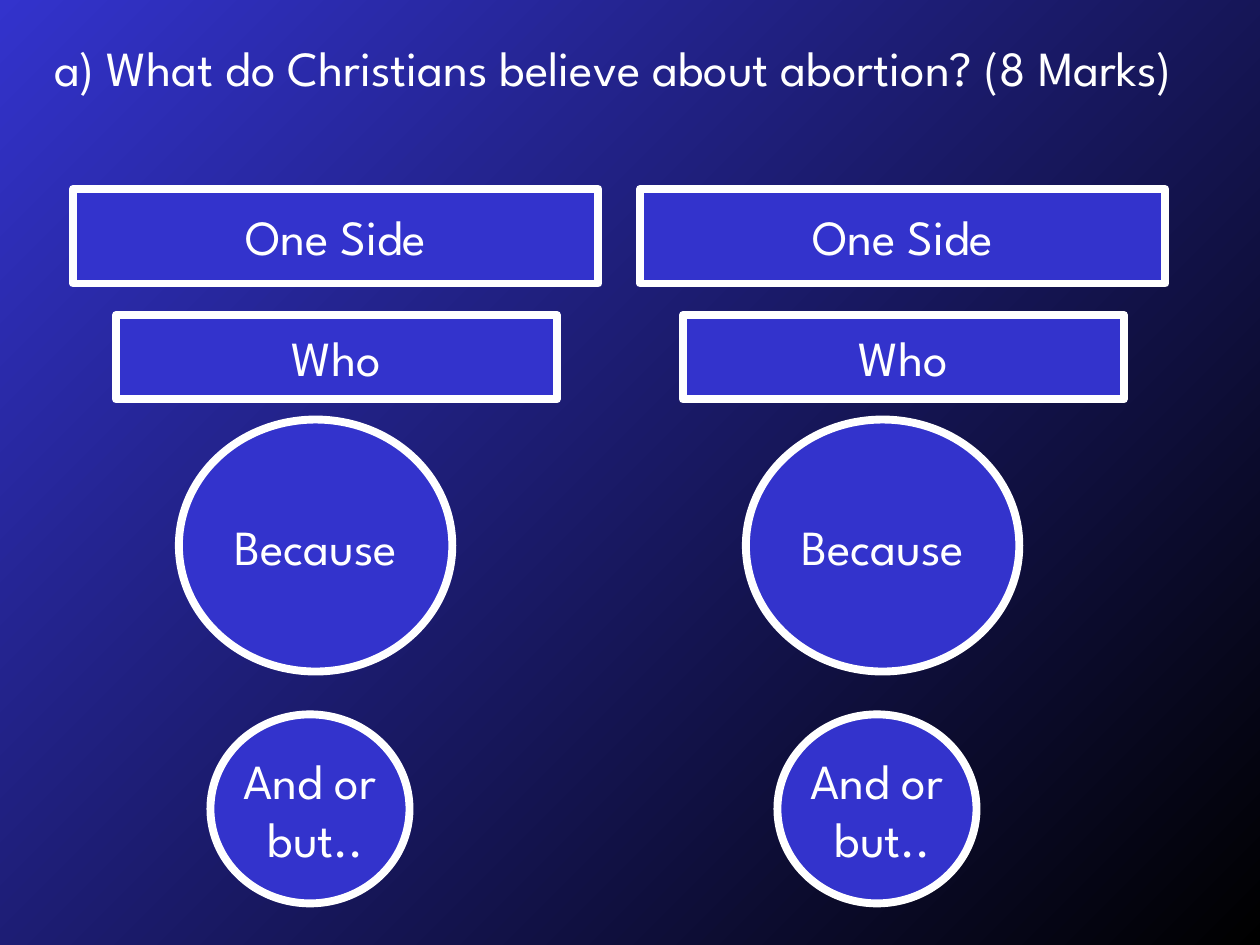
from pptx import Presentation
from pptx.dml.color import RGBColor
from pptx.enum.shapes import MSO_SHAPE
from pptx.enum.text import MSO_ANCHOR, MSO_AUTO_SIZE, PP_ALIGN
from pptx.util import Inches, Pt

BLUE, WHITE, BLACK = "3333CC", "FFFFFF", "000000"
RECT, OVAL = MSO_SHAPE.RECTANGLE, MSO_SHAPE.OVAL
PARTS = [
    (RECT, "One Side", 0, 0, 4.17, 0.75),
    (RECT, "Who", 0.34, 1, 3.5, 0.67),
    (OVAL, "Because", 0.84, 1.83, 2.17, 2),
    (OVAL, "And or\n but..", 1.09, 4.17, 1.58, 1.5),
]


def color(code):
    """Turn a hex string into a colour."""
    return RGBColor.from_string(code)


def write(shape, text, size=28, font="League Spartan", ink=WHITE,
          align=PP_ALIGN.CENTER, anchor=MSO_ANCHOR.MIDDLE, wrap=False):
    """Fill a shape with formatted text."""
    frame = shape.text_frame
    frame.text = text
    frame.word_wrap = wrap
    frame.auto_size = MSO_AUTO_SIZE.NONE
    frame.vertical_anchor = anchor
    for line in frame.paragraphs:
        line.alignment = align
        line.font.size = Pt(size)
        line.font.name = font
        line.font.color.rgb = color(ink)


def paint(slide):
    """Give the slide its diagonal gradient."""
    fill = slide.background.fill
    fill.gradient()
    fill.gradient_angle = 315
    for stop, code in zip(fill.gradient_stops, (BLUE, BLACK)):
        stop.color.rgb = color(code)


def head(slide, left, top, width, height):
    """Place the question in the title placeholder."""
    title = slide.shapes.title
    title.left, title.top = Inches(left), Inches(top)
    title.width, title.height = Inches(width), Inches(height)
    write(title, "a) What do Christians believe about abortion? (8 Marks)",
          align=PP_ALIGN.LEFT, anchor=MSO_ANCHOR.TOP, wrap=True)


def side(slide, left, top):
    """Draw one column of the argument plan."""
    for kind, text, x, y, width, height in PARTS:
        shape = slide.shapes.add_shape(
            kind, Inches(left + x), Inches(top + y), Inches(width), Inches(height))
        shape.shadow.inherit = False
        shape.fill.solid()
        shape.fill.fore_color.rgb = color(BLUE)
        shape.line.color.rgb = color(WHITE)
        shape.line.width = Pt(4.5)
        write(shape, text)


def main():
    """Build and save the slide."""
    deck = Presentation()
    deck.slide_width, deck.slide_height = Inches(10), Inches(7.5)
    slide = deck.slides.add_slide(deck.slide_layouts[5])
    paint(slide)
    head(slide, 0.33, 0.25, 9.17, 1.63)
    for left in (0.58, 5.08):
        side(slide, left, 1.5)
    deck.save("out.pptx")


if __name__ == "__main__":
    main()
